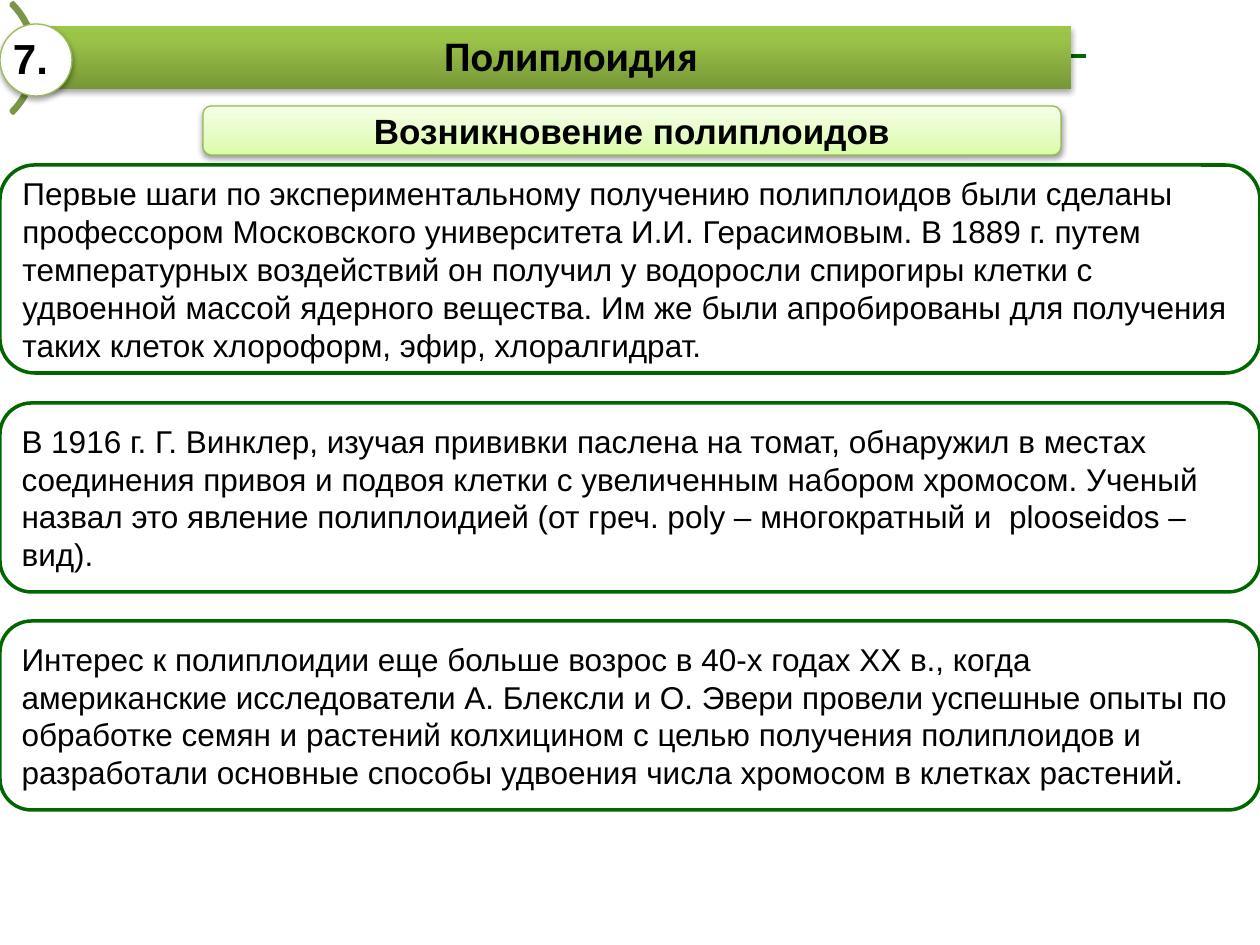
from dataclasses import dataclass

from lxml import etree
from pptx import Presentation, util as u
from pptx.dml.color import RGBColor
from pptx.enum import shapes, text
from pptx.oxml.ns import qn


@dataclass(frozen=True)
class Theme:
    ink: str = "000000"
    paper: str = "FFFFFF"
    frame: str = "006600"
    arc: str = "7C9647"
    badge_edge: str = "9BBB59"
    banner_edge: str = "98B955"
    bar_stops: tuple = ((0, "779737"), (80, "9BC348"), (100, "9DC746"))
    banner_stops: tuple = ((0, "DAFDA7"), (35, "E4FCC2"), (100, "F5FFE7"))
    font: str = "Arial"
    title_font: str = "Calibri"
    title_size: int = 24
    banner_size: int = 20
    body_size: int = 18


theme = Theme()
PX = 914400 / 126


def px(*lengths):
    return [u.Emu(round(length * PX)) for length in lengths]


def write(shape, words, size, font=theme.font, bold=False, align=text.PP_ALIGN.CENTER):
    frame = shape.text_frame
    frame.text = words
    frame.word_wrap = True
    frame.auto_size = text.MSO_AUTO_SIZE.NONE
    frame.vertical_anchor = text.MSO_ANCHOR.MIDDLE
    paragraph = frame.paragraphs[0]
    paragraph.alignment = align
    paragraph.font.name = font
    paragraph.font.size = u.Pt(size)
    paragraph.font.bold = bold
    paragraph.font.color.rgb = RGBColor.from_string(theme.ink)
    return frame


deck = Presentation()
deck.slide_width, deck.slide_height = px(1260, 945)
slide = deck.slides.add_slide(deck.slide_layouts[5])
items = slide.shapes

rule = items.add_connector(shapes.MSO_CONNECTOR.STRAIGHT, *px(35, 56, 1086, 56))
rule.line.color.rgb = RGBColor.from_string(theme.frame)
rule.line.width = u.Pt(2)
etree.SubElement(rule._element.spPr, qn("a:effectLst"))

banner = items.add_shape(shapes.MSO_SHAPE.ROUNDED_RECTANGLE, *px(203, 106, 858, 49))
banner.line.color.rgb = RGBColor.from_string(theme.banner_edge)
banner.line.width = u.Pt(0.75)
write(banner, "Возникновение полиплоидов", theme.banner_size, bold=True)

history = [
    (165, 208, "Первые шаги по экспериментальному получению полиплоидов были сделаны профессором "
     "Московского университета И.И. Герасимовым. В 1889 г. путем температурных воздействий он "
     "получил у водоросли спирогиры клетки с удвоенной массой ядерного вещества. Им же были "
     "апробированы для получения таких клеток хлороформ, эфир, хлоралгидрат."),
    (403, 189, "В 1916 г. Г. Винклер, изучая прививки паслена на томат, обнаружил в местах соединения "
     "привоя и подвоя клетки с увеличенным набором хромосом. Ученый назвал это явление "
     "полиплоидией (от греч. poly – многократный и  plooseidos – вид)."),
    (621, 189, "Интерес к полиплоидии еще больше возрос в 40-х годах XX в., когда американские "
     "исследователи А. Блексли и О. Эвери провели успешные опыты по обработке семян и растений "
     "колхицином с целью получения полиплоидов и разработали основные способы удвоения числа "
     "хромосом в клетках растений."),
]
for top, height, story in history:
    card = items.add_shape(shapes.MSO_SHAPE.ROUNDED_RECTANGLE, *px(0, top, 1260, height))
    card.shadow.inherit = False
    card.fill.background()
    card.line.color.rgb = RGBColor.from_string(theme.frame)
    card.line.width = u.Pt(2)
    write(card, story, theme.body_size, align=text.PP_ALIGN.LEFT)

arc = items.add_shape(shapes.MSO_SHAPE.BLOCK_ARC, *px(-120, -20, 156, 156))
arc.shadow.inherit = False
for index, value in enumerate((189, 27, 0.02)):
    arc.adjustments[index] = value
arc.fill.background()
arc.line.color.rgb = RGBColor.from_string(theme.arc)
arc.line.width = u.Pt(2)

topic = items.title
items._spTree.append(topic._element)
topic.left, topic.top, topic.width, topic.height = px(35, 26, 1036, 63)
topic_frame = write(topic, "Полиплоидия", theme.title_size, theme.title_font, bold=True)
topic_frame.margin_left, topic_frame.margin_top = px(45, 9)
topic_frame.margin_right, topic_frame.margin_bottom = px(9, 9)
topic_frame.paragraphs[0].line_spacing = 0.9

badge = items.add_shape(shapes.MSO_SHAPE.OVAL, *px(0, 24, 72, 72))
badge.fill.solid()
badge.fill.fore_color.rgb = RGBColor.from_string(theme.paper)
badge.line.color.rgb = RGBColor.from_string(theme.badge_edge)
badge.line.width = u.Pt(0.75)

number = items.add_textbox(*px(0, 26, 61, 63))
number_frame = write(number, "7.", theme.title_size, bold=True)
number_frame.word_wrap = False

for shape, stops in ((banner, theme.banner_stops), (topic, theme.bar_stops)):
    shape.fill.gradient()
    shape.fill.gradient_angle = 90
    stop_list = shape._element.spPr.find(".//" + qn("a:gsLst"))
    for stop in list(stop_list):
        stop_list.remove(stop)
    for percent, color in stops:
        stop = etree.SubElement(stop_list, qn("a:gs"), pos=str(percent * 1000))
        etree.SubElement(stop, qn("a:srgbClr"), val=color)

for shape, distance, opacity in ((banner, 20000, 38), (topic, 23000, 35), (badge, 23000, 35)):
    shape.shadow.inherit = False
    effects = shape._element.spPr.find(qn("a:effectLst"))
    shadow = etree.SubElement(effects, qn("a:outerShdw"), blurRad="40000", dist=str(distance),
                              dir="5400000", rotWithShape="0")
    shade = etree.SubElement(shadow, qn("a:srgbClr"), val=theme.ink)
    etree.SubElement(shade, qn("a:alpha"), val=str(opacity * 1000))

deck.save("out.pptx")
